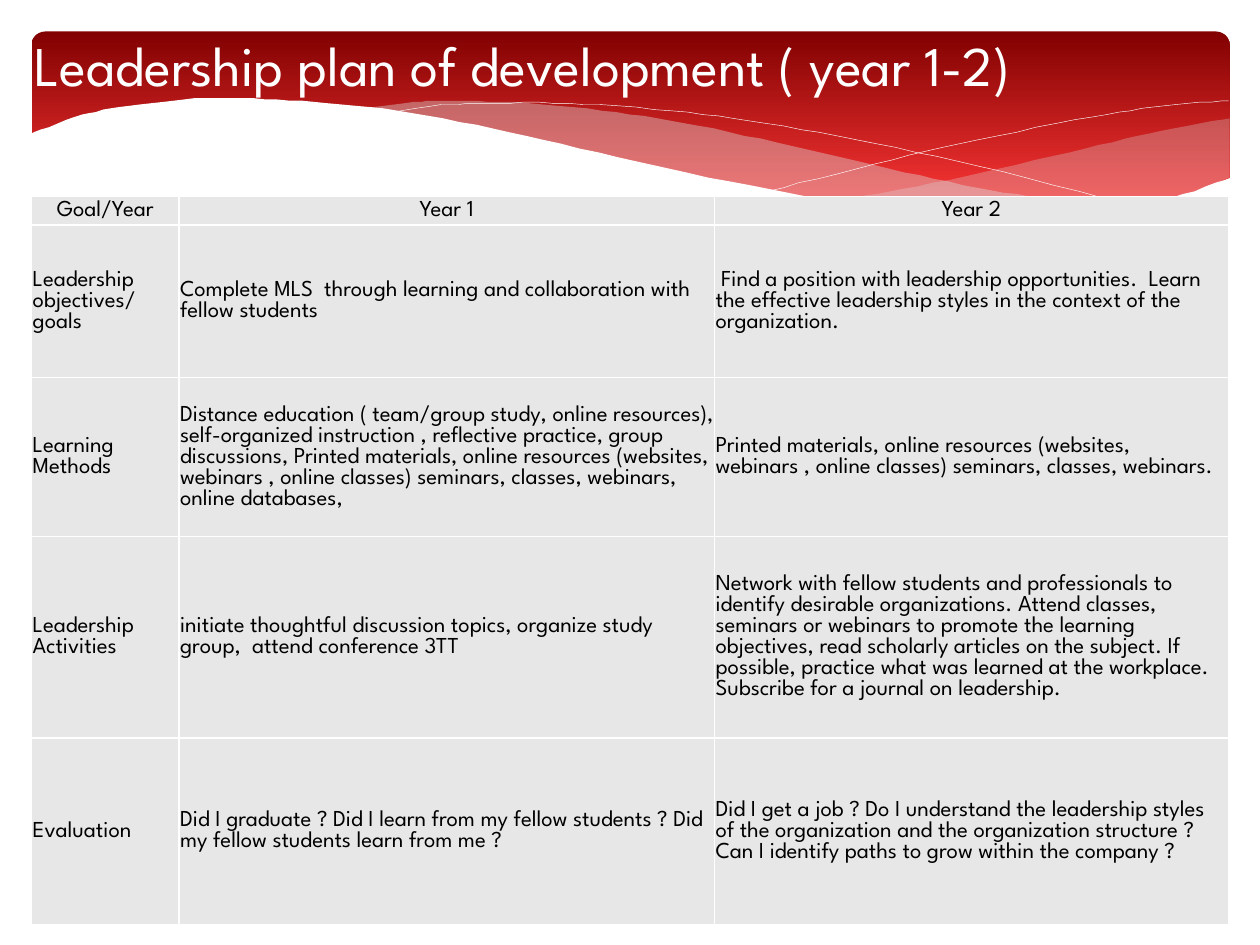
import lxml.etree
import pptx
import pptx.dml.color
import pptx.enum.dml
import pptx.enum.shapes
import pptx.enum.text
import pptx.oxml.ns
import pptx.util

RGB = pptx.dml.color.RGBColor
WHITE = RGB(0xFF, 0xFF, 0xFF)
BLACK = RGB(0, 0, 0)
DARK = RGB(0x82, 0x01, 0x01)
RED = RGB(0xFE, 0x37, 0x37)
MIST = RGB(0xDE, 0xDE, 0xE0)
GREY = RGB(0xE7, 0xE7, 0xE7)
FONT = "League Spartan"

COLS, ROWS = 1000, 750
UNIT = pptx.util.Inches(10) // COLS

RIGHT_TOP = [(951, 69), (896, 79), (836, 93), (754, 112), (681, 127), (636, 135)]
RIGHT_LOW = [(636, 135), (694, 142), (744, 146), (789, 147), (838, 145),
             (888, 137), (924, 127), (951, 116)]
MID_TOP = [(261, 61), (303, 56), (336, 55), (395, 57), (464, 64), (530, 75),
           (604, 91), (681, 109), (750, 124), (812, 134), (868, 142)]
MID_LOW = [(868, 142), (813, 147), (771, 148), (697, 143), (625, 133),
           (541, 118), (424, 91), (358, 76), (298, 65), (261, 61)]
FALL = [(284, 65), (319, 59), (362, 57), (425, 57), (508, 63), (583, 73),
        (670, 89), (770, 111), (882, 141)]
RISE = [(588, 126), (670, 105), (751, 86), (841, 68), (899, 59), (950, 55)]
FRONT = [(952, 116), (905, 132), (850, 142), (784, 146), (719, 143), (643, 135),
         (554, 119), (450, 96), (366, 77), (291, 63), (225, 56), (168, 53),
         (121, 54), (70, 60), (34, 68), (-2, 82)]
BASE = [(-2, 199), (952, 199)]

PLAN = [
    ["Goal/Year", "Year 1", "Year 2"],
    ["Leadership objectives/ goals",
     "Complete MLS  through learning and collaboration with fellow students",
     " Find a position with leadership opportunities.  Learn the effective "
     "leadership styles in the context of the organization."],
    ["Learning Methods",
     "Distance education ( team/group study, online resources), self-organized "
     "instruction , reflective practice, group discussions, Printed materials, "
     "online resources (websites, webinars , online classes) seminars, classes, "
     "webinars, online databases,",
     "Printed materials, online resources (websites, webinars , online classes) "
     "seminars, classes, webinars."],
    ["Leadership Activities",
     "initiate thoughtful discussion topics, organize study group,  attend "
     "conference 3TT",
     "Network with fellow students and professionals to identify desirable "
     "organizations. Attend classes, seminars or webinars to promote the learning "
     "objectives, read scholarly articles on the subject. If possible, practice "
     "what was learned at the workplace. Subscribe for a journal on leadership."],
    ["Evaluation",
     "Did I graduate ? Did I learn from my fellow students ? Did my fellow "
     "students learn from me ?",
     "Did I get a job ? Do I understand the leadership styles of the organization "
     "and the organization structure ? Can I identify paths to grow within the "
     "company ?"],
]


def scale(box):
    return [n * UNIT for n in box]


def smooth(knots, steps=6):
    ends = [knots[0]] + knots + [knots[-1]]
    out = [knots[0]]
    for a, b, c, d in zip(ends, ends[1:], ends[2:], ends[3:]):
        for i in range(1, steps + 1):
            t = i / steps
            out.append(tuple(
                (2 * q + (r - p) * t + (2 * p - 5 * q + 4 * r - s) * t ** 2
                 + (3 * q - p - 3 * r + s) * t ** 3) / 2
                for p, q, r, s in zip(a, b, c, d)))
    return out


def add_wave(slide, box, points, fill=None, alpha=100):
    left, top = scale(box[:2])
    pen = slide.shapes.build_freeform(*points[0], scale=UNIT)
    pen.add_line_segments(points[1:], close=fill is not None)
    wave = pen.convert_to_shape(left, top)
    wave.shadow.inherit = False
    if fill is None:
        wave.fill.background()
        wave.line.color.rgb = WHITE
        wave.line.width = pptx.util.Pt(0.25)
        return
    wave.line.fill.background()
    wave.fill.solid()
    wave.fill.fore_color.rgb = fill
    if alpha < 100:
        tint = wave.fill._xPr.find(".//" + pptx.oxml.ns.qn("a:srgbClr"))
        lxml.etree.SubElement(tint, pptx.oxml.ns.qn("a:alpha"), val=str(alpha * 1000))


def add_banner(slide, box):
    kind = pptx.enum.shapes.MSO_SHAPE.ROUNDED_RECTANGLE
    panel = slide.shapes.add_shape(kind, *scale(box))
    panel.adjustments[0] = 0.07
    panel.shadow.inherit = False
    panel.line.fill.background()
    panel.fill.gradient()
    panel.fill.gradient_angle = 270
    for stop, color, place in zip(panel.fill.gradient_stops, (DARK, RED), (0, 0.9)):
        stop.color.rgb = color
        stop.position = place
    add_wave(slide, box, smooth(RIGHT_TOP) + smooth(RIGHT_LOW), MIST, 29)
    add_wave(slide, box, smooth(MID_TOP) + smooth(MID_LOW), MIST, 40)
    add_wave(slide, box, smooth(FALL))
    add_wave(slide, box, smooth(RISE))
    add_wave(slide, box, smooth(FRONT) + BASE, WHITE)


def add_text(para, text, size, color, align):
    para.alignment = align
    run = para.add_run()
    run.text = text
    run.font.name = FONT
    run.font.size = pptx.util.Pt(size)
    run.font.color.rgb = color


def add_title(slide, box, text):
    title = slide.shapes.title
    slide.shapes._spTree.append(title._element)
    title.left, title.top, title.width, title.height = scale(box)
    frame = title.text_frame
    frame.word_wrap = False
    frame.auto_size = pptx.enum.text.MSO_AUTO_SIZE.SHAPE_TO_FIT_TEXT
    add_text(frame.paragraphs[0], text, 32, WHITE, pptx.enum.text.PP_ALIGN.LEFT)


def add_edges(cell):
    qn = pptx.oxml.ns.qn
    props = cell._tc.get_or_add_tcPr()
    for side in ("lnL", "lnR", "lnT", "lnB"):
        edge = lxml.etree.SubElement(props, qn("a:" + side), w=str(pptx.util.Pt(1)))
        fill = lxml.etree.SubElement(edge, qn("a:solidFill"))
        lxml.etree.SubElement(fill, qn("a:srgbClr"), val=str(WHITE))


def add_plan(slide, box, widths, heights):
    table = slide.shapes.add_table(len(heights), len(widths), *scale(box)).table
    table.first_row = table.horz_banding = False
    for col, width in zip(table.columns, widths):
        col.width = width * UNIT
    align = pptx.enum.text.PP_ALIGN
    for r, (row, height) in enumerate(zip(table.rows, heights)):
        row.height = height * UNIT
        for cell, text in zip(row.cells, PLAN[r]):
            add_edges(cell)
            cell.fill.solid()
            cell.fill.fore_color.rgb = GREY
            cell.vertical_anchor = pptx.enum.text.MSO_ANCHOR.MIDDLE
            cell.margin_left = cell.margin_right = cell.margin_top = UNIT
            cell.margin_bottom = 0
            side = align.LEFT if r else align.CENTER
            add_text(cell.text_frame.paragraphs[0], text, 13, BLACK, side)


def main():
    deck = pptx.Presentation()
    deck.slide_width, deck.slide_height = scale((COLS, ROWS))
    slide = deck.slides.add_slide(deck.slide_layouts[5])
    add_banner(slide, (25, 25, 951, 156))
    add_title(slide, (17, 19, 983, 64), "Leadership plan of development ( year 1-2)")
    add_plan(slide, (25, 156, 950, 577), (117, 425, 408), (22, 121, 126, 160, 148))
    deck.save("out.pptx")


if __name__ == "__main__":
    main()
